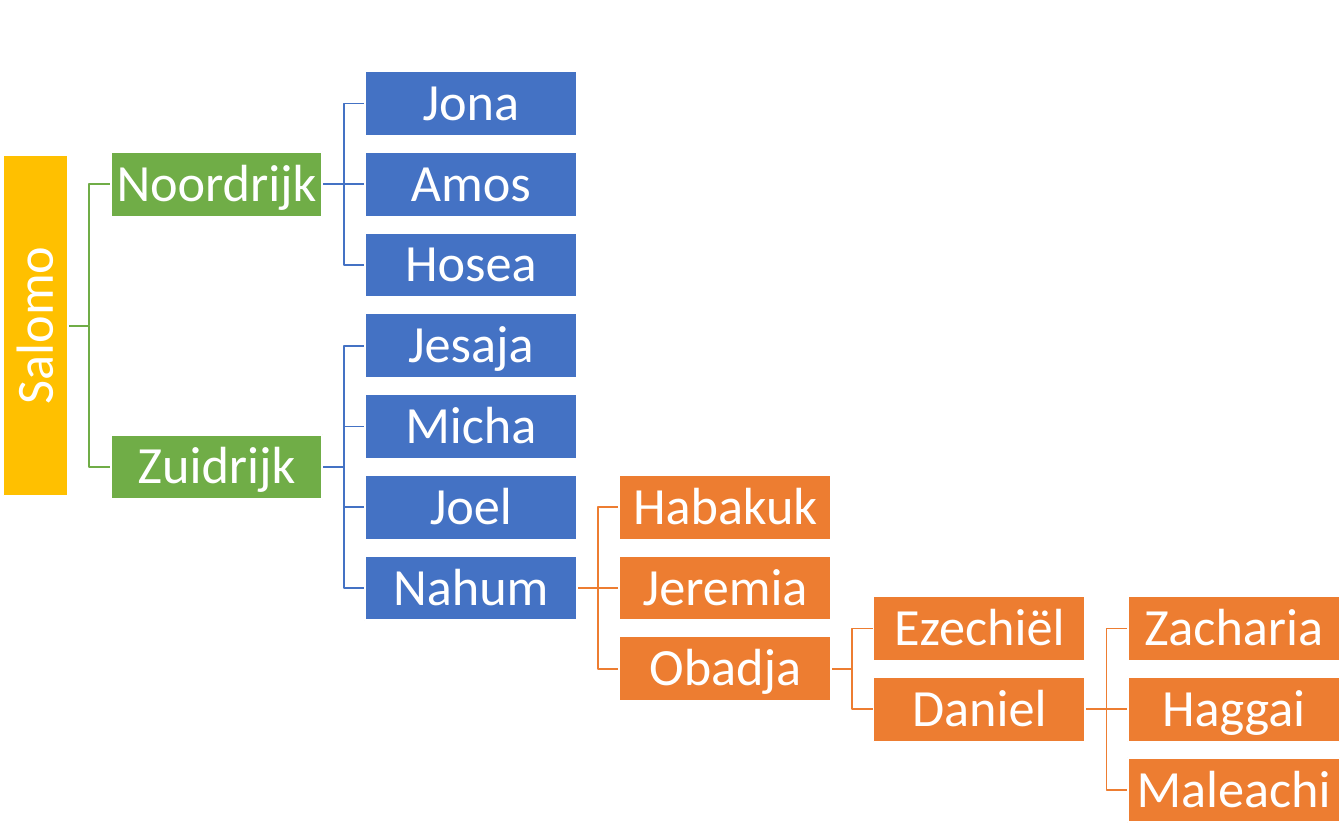
from pptx import Presentation
from pptx import util as u
from pptx.dml.color import RGBColor
from pptx.enum import shapes, text
from pptx.oxml.ns import qn
from lxml import etree

# (name, children)
TREE = ("Salomo", [
    ("Noordrijk", [("Jona", []), ("Amos", []), ("Hosea", [])]),
    ("Zuidrijk", [
        ("Jesaja", []), ("Micha", []), ("Joel", []),
        ("Nahum", [
            ("Habakuk", []), ("Jeremia", []),
            ("Obadja", [
                ("Ezechiël", []),
                ("Daniel", [("Zacharia", []), ("Haggai", []), ("Maleachi", [])]),
            ]),
        ]),
    ]),
])
LEVEL_COLOURS = ["FFC000", "70AD47", "4472C4", "ED7D31", "ED7D31", "ED7D31"]
WHITE = "FFFFFF"

PX = 914400 / 1000                  # EMU per px, 1000 px to the inch
SLIDE_W, SLIDE_H = 10000, 6250
BOX_W, BOX_H, GAP = 1576, 481, 316  # GAP is the space between levels
PITCH = 601                         # from one row to the next
ROOT_LEFT, ROOT_LENGTH, ROOT_ROW = 26, 2530, 2.75
FIRST_ROW_Y = 770                   # middle of row 0
KINGDOM_ROWS = 3.5                  # rows between the two kingdoms
INSET = 20


def px(n):
    return u.Emu(round(n * PX))


def rgb(colour):
    return RGBColor.from_string(colour)


def add_box(name, level, row):
    if level == 0:
        left, w, h = ROOT_LEFT, BOX_H, ROOT_LENGTH
    else:
        left = ROOT_LEFT + BOX_H + GAP + (level - 1) * (BOX_W + GAP)
        w, h = BOX_W, BOX_H
    top = FIRST_ROW_Y + row * PITCH - h / 2
    sp = s.shapes.add_shape(shapes.MSO_SHAPE.RECTANGLE, px(left), px(top), px(w), px(h))
    sp.shadow.inherit = False
    sp.fill.solid()
    sp.fill.fore_color.rgb = rgb(LEVEL_COLOURS[level])
    sp.line.color.rgb = rgb(WHITE)
    sp.line.width = u.Pt(1)

    tf = sp.text_frame
    tf.word_wrap = True
    tf.vertical_anchor = text.MSO_ANCHOR.MIDDLE
    tf.margin_left = tf.margin_right = tf.margin_top = tf.margin_bottom = px(INSET)
    if level == 0:
        tf._txBody.find(qn("a:bodyPr")).set("vert", "vert270")
    p = tf.paragraphs[0]
    p.alignment = text.PP_ALIGN.CENTER
    p.line_spacing = 0.9
    r = p.add_run()
    r.text = name
    r.font.name = "Calibri"
    r.font.size = u.Pt(28)
    r.font.color.rgb = rgb(WHITE)
    return sp


def join(parent, child, colour):
    """Link parent's right side to child's left side, behind the boxes."""
    c = s.shapes.add_connector(shapes.MSO_CONNECTOR.ELBOW, 0, 0, 0, 0)
    c.begin_connect(parent, 3)
    c.end_connect(child, 1)
    c.line.color.rgb = rgb(colour)
    c.line.width = u.Pt(1)
    etree.SubElement(c._element.spPr, qn("a:effectLst"))
    s.shapes._spTree.insert(2, c._element)


def add_branch(node, level, row):
    """Draw a node with its children spread evenly around its own row."""
    name, children = node
    box = add_box(name, level, row)
    spread = KINGDOM_ROWS if level == 0 else 1
    for i, child in enumerate(children):
        child_row = row + (i - (len(children) - 1) / 2) * spread
        child_box = add_branch(child, level + 1, child_row)
        join(box, child_box, LEVEL_COLOURS[level + 1])
    return box


prs = Presentation()
prs.slide_width, prs.slide_height = px(SLIDE_W), px(SLIDE_H)
s = prs.slides.add_slide(prs.slide_layouts[6])
add_branch(TREE, 0, ROOT_ROW)
prs.save("out.pptx")
